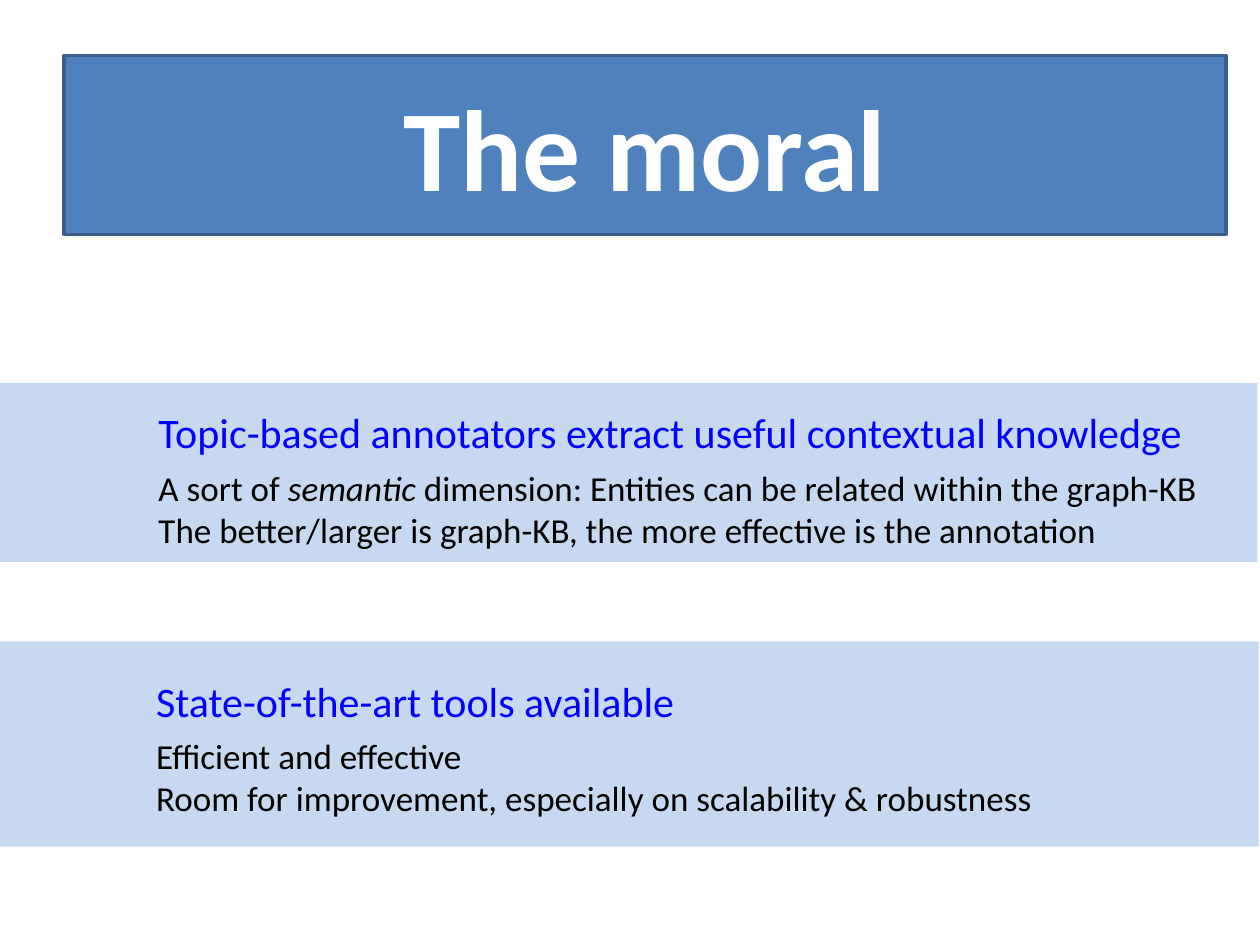
from pptx import Presentation
from pptx.dml.color import RGBColor
from pptx.enum.shapes import MSO_SHAPE
from pptx.enum.text import MSO_ANCHOR, MSO_AUTO_SIZE, PP_ALIGN
from pptx.util import Inches, Pt

COLORS = {
    "banner": "4F81BD",
    "banner_line": "3A5F8C",
    "band": "C6D9F1",
    "heading": "0000FF",
    "body": "000000",
    "white": "FFFFFF",
}
FONT = "Calibri"


def rgb(name):
    return RGBColor.from_string(COLORS[name])


def add_run(paragraph, text, *, size, color, bold=False, italic=False):
    run = paragraph.add_run()
    run.text = text
    run.font.name = FONT
    run.font.size = Pt(size)
    run.font.bold = bold
    run.font.italic = italic
    run.font.color.rgb = rgb(color)


def add_rectangle(slide, box, fill, line=None):
    shape = slide.shapes.add_shape(MSO_SHAPE.RECTANGLE, *map(Inches, box))
    shape.shadow.inherit = False
    shape.fill.solid()
    shape.fill.fore_color.rgb = rgb(fill)
    if line:
        shape.line.color.rgb = rgb(line)
        shape.line.width = Pt(2)
    else:
        shape.line.fill.background()
    return shape


def add_lines(slide, box, lines, **text_format):
    frame = slide.shapes.add_textbox(*map(Inches, box)).text_frame
    frame.word_wrap = False
    frame.auto_size = MSO_AUTO_SIZE.SHAPE_TO_FIT_TEXT
    for index, line in enumerate(lines):
        paragraph = frame.add_paragraph() if index else frame.paragraphs[0]
        for text, italic in line:
            add_run(paragraph, text, italic=italic, **text_format)


def add_banner(slide, box, title):
    frame = add_rectangle(slide, box, "banner", "banner_line").text_frame
    frame.word_wrap = True
    frame.vertical_anchor = MSO_ANCHOR.MIDDLE
    paragraph = frame.paragraphs[0]
    paragraph.alignment = PP_ALIGN.CENTER
    add_run(paragraph, title, size=66, color="white", bold=True)


def add_band(slide, box, text_left, text_top, widths, heading, lines):
    add_rectangle(slide, box, "band")
    heading_width, body_width = widths
    add_lines(slide, (text_left, text_top, heading_width, 0.5),
              [[(heading, False)]], size=24, color="heading")
    add_lines(slide, (text_left, text_top + 0.47, body_width, 0.77),
              lines, size=20, color="body")


def main():
    presentation = Presentation()
    presentation.slide_width = Inches(10)
    presentation.slide_height = Inches(7.5)
    slide = presentation.slides.add_slide(presentation.slide_layouts[6])

    add_banner(slide, (0.51, 0.44, 9.22, 1.42), "The moral")
    add_band(
        slide, (-0.02, 3.04, 10, 1.42), 1.16, 3.18, (8.4, 8.53),
        "Topic-based annotators extract useful contextual knowledge",
        [
            [("A sort of ", False), ("semantic ", True),
             ("dimension: Entities can be related within the graph-KB", False)],
            [("The better/larger is graph-KB, the more effective is the annotation", False)],
        ],
    )
    add_band(
        slide, (0, 5.09, 9.99, 1.63), 1.14, 5.31, (5.03, 7.17),
        "State-of-the-art tools available",
        [
            [("Efficient and effective", False)],
            [("Room for improvement, especially on scalability & robustness", False)],
        ],
    )
    presentation.save("out.pptx")


if __name__ == "__main__":
    main()
